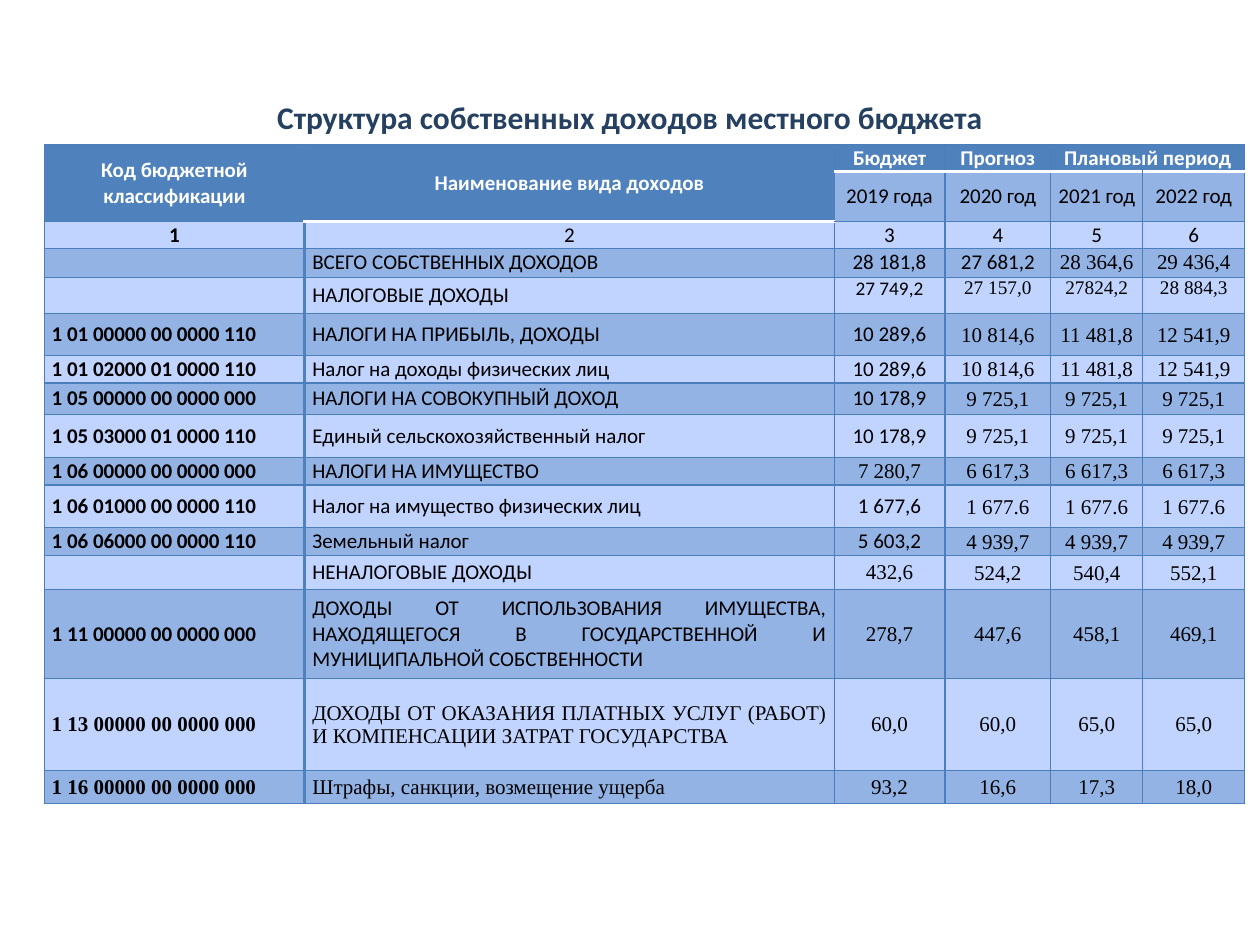
from itertools import product

from lxml import etree
from pptx import Presentation
from pptx.dml.color import RGBColor
from pptx.enum.text import MSO_ANCHOR as ANCHOR, PP_ALIGN as ALIGN
from pptx.oxml.ns import qn
from pptx.util import Inches, Pt

COLORS = {
    "title": "254061",
    "header": "4F81BD",
    "band": "93B3E5",
    "light": "C0D4FF",
    "grid": "4B7EBC",
    "white": "FFFFFF",
    "black": "000000",
}
SANS, SERIF = "Calibri", "Times New Roman"
COLS = [2.07, 4.2, 0.88, 0.84, 0.73, 0.81]
THIN, THICK, WHITE = ("grid", 0.75), ("header", 2), ("white", 2)

# Row height, index of the first column set in the serif font, cell texts
ROWS = [
    (0.21, 6, ["Код бюджетной классификации", "Наименование вида доходов",
               "Бюджет", "Прогноз", "Плановый период", ""]),
    (0.36, 6, ["", "", "2019 года", "2020 год", "2021 год", "2022 год"]),
    (0.21, 6, ["1", "2", "3", "4", "5", "6"]),
    (0.23, 4, ["", "ВСЕГО СОБСТВЕННЫХ ДОХОДОВ",
               "28 181,8", "27 681,2", "28 364,6", "29 436,4"]),
    (0.29, 3, ["", "НАЛОГОВЫЕ ДОХОДЫ",
               "27 749,2", "27 157,0", "27824,2", "28 884,3"]),
    (0.33, 3, ["1 01 00000 00 0000 110", "НАЛОГИ НА ПРИБЫЛЬ, ДОХОДЫ",
               "10 289,6", "10 814,6", "11 481,8", "12 541,9"]),
    (0.22, 3, ["1 01 02000 01 0000 110", "Налог на доходы физических лиц",
               "10 289,6", "10 814,6", "11 481,8", "12 541,9"]),
    (0.25, 3, ["1 05 00000 00 0000 000", "НАЛОГИ НА СОВОКУПНЫЙ ДОХОД",
               "10 178,9", "9 725,1", "9 725,1", "9 725,1"]),
    (0.34, 3, ["1 05 03000 01 0000 110", "Единый сельскохозяйственный налог",
               "10 178,9", "9 725,1", "9 725,1", "9 725,1"]),
    (0.22, 2, ["1 06 00000 00 0000 000", "НАЛОГИ НА ИМУЩЕСТВО",
               "7 280,7", "6 617,3", "6 617,3", "6 617,3"]),
    (0.34, 3, ["1 06 01000 00 0000 110", "Налог на имущество физических лиц",
               "1 677,6", "1 677.6", "1 677.6", "1 677.6"]),
    (0.22, 3, ["1 06 06000 00 0000 110", "Земельный налог",
               "5 603,2", "4 939,7", "4 939,7", "4 939,7"]),
    (0.27, 2, ["", "НЕНАЛОГОВЫЕ ДОХОДЫ", "432,6", "524,2", "540,4", "552,1"]),
    (0.71, 2, ["1 11 00000 00 0000 000",
               "ДОХОДЫ ОТ ИСПОЛЬЗОВАНИЯ ИМУЩЕСТВА, НАХОДЯЩЕГОСЯ В "
               "ГОСУДАРСТВЕННОЙ И МУНИЦИПАЛЬНОЙ СОБСТВЕННОСТИ",
               "278,7", "447,6", "458,1", "469,1"]),
    (0.73, 0, ["1 13 00000 00 0000 000",
               "ДОХОДЫ ОТ ОКАЗАНИЯ ПЛАТНЫХ УСЛУГ (РАБОТ) И КОМПЕНСАЦИИ "
               "ЗАТРАТ ГОСУДАРСТВА",
               "60,0", "60,0", "65,0", "65,0"]),
    (0.26, 0, ["1 16 00000 00 0000 000", "Штрафы, санкции, возмещение ущерба",
               "93,2", "16,6", "17,3", "18,0"]),
]
SUBTOTAL, LAST_TIGHT = 4, 13


def write(p, text, color, align, **font):
    """Fill a paragraph with one formatted run; size an empty one to match."""
    p.alignment = align
    if not text:
        end = etree.SubElement(p._p, qn("a:endParaRPr"))
        end.set("sz", str(font["size"].centipoints))
        return
    r = p.add_run()
    r.text = text
    r.font.color.rgb = RGBColor.from_string(COLORS[color])
    for name, value in font.items():
        setattr(r.font, name, value)


def set_borders(cell, borders):
    """Draw the cell's edges; borders maps L, R, T, B to (colour, points)."""
    tcPr = cell._tc.get_or_add_tcPr()
    for i, (side, (color, width)) in enumerate(borders.items()):
        ln = etree.Element(qn(f"a:ln{side}"), w=str(Pt(width)))
        fill = etree.SubElement(ln, qn("a:solidFill"))
        etree.SubElement(fill, qn("a:srgbClr"), val=COLORS[color])
        tcPr.insert(i, ln)


prs = Presentation()
prs.slide_width, prs.slide_height = Inches(10), Inches(7.5)
s = prs.slides.add_slide(prs.slide_layouts[6])

title = s.shapes.add_textbox(Inches(0.5), Inches(0.3), Inches(9), Inches(1.25))
tf = title.text_frame
tf.word_wrap = True
tf.vertical_anchor = ANCHOR.MIDDLE
write(tf.paragraphs[0], "Структура собственных доходов местного бюджета",
      "title", ALIGN.CENTER, size=Pt(18), name=SANS, bold=True)

heights = [row[0] for row in ROWS]
table = s.shapes.add_table(
    len(ROWS), len(COLS), Inches(0.35), Inches(1.15),
    Inches(sum(COLS)), Inches(sum(heights))).table
for col, width in zip(table.columns, COLS):
    col.width = Inches(width)
for row, height in zip(table.rows, heights):
    row.height = Inches(height)

for i, j in product(range(len(ROWS)), range(len(COLS))):
    _, serif_from, texts = ROWS[i]
    cell = table.cell(i, j)
    header = i == 0 or (i == 1 and j < 2)
    subtotal_value = i == SUBTOTAL and j > 1
    tight = SUBTOTAL < i <= LAST_TIGHT and j > 2

    side = 0.01 if tight else 0.07 if subtotal_value else 0.06
    cell.margin_left = cell.margin_right = Inches(side)
    cell.margin_top = Inches(0.01 if tight else 0)
    cell.margin_bottom = 0
    if subtotal_value:
        cell.vertical_anchor = ANCHOR.TOP
    elif i == 2 or (i == 0 and j > 2):
        cell.vertical_anchor = ANCHOR.BOTTOM
    else:
        cell.vertical_anchor = ANCHOR.MIDDLE

    write(cell.text_frame.paragraphs[0], texts[j],
          "white" if header else "black",
          ALIGN.JUSTIFY if i > 2 and j < 2 else ALIGN.CENTER,
          size=Pt(11 if subtotal_value else 12),
          name=SERIF if j >= serif_from else SANS,
          bold=header or j == 0)

    cell.fill.solid()
    fill = "header" if header else "band" if i % 2 else "light"
    cell.fill.fore_color.rgb = RGBColor.from_string(COLORS[fill])

    # The white rule closes the header one row lower under the name column
    rule_row = 0 if j > 1 else 1 if j == 1 else None
    set_borders(cell, {
        "L": THICK if j == 1 else THIN,
        "R": THICK if j == 0 else THIN,
        "T": WHITE if i - 1 == rule_row else THIN,
        "B": WHITE if i == rule_row else THIN,
    }) if rule_row is not None else set_borders(
        cell, {"L": THIN, "R": THICK, "T": THIN, "B": THIN})

for first, last in [((0, 0), (1, 0)), ((0, 1), (1, 1)), ((0, 4), (0, 5))]:
    table.cell(*first).merge(table.cell(*last))

prs.save("out.pptx")
